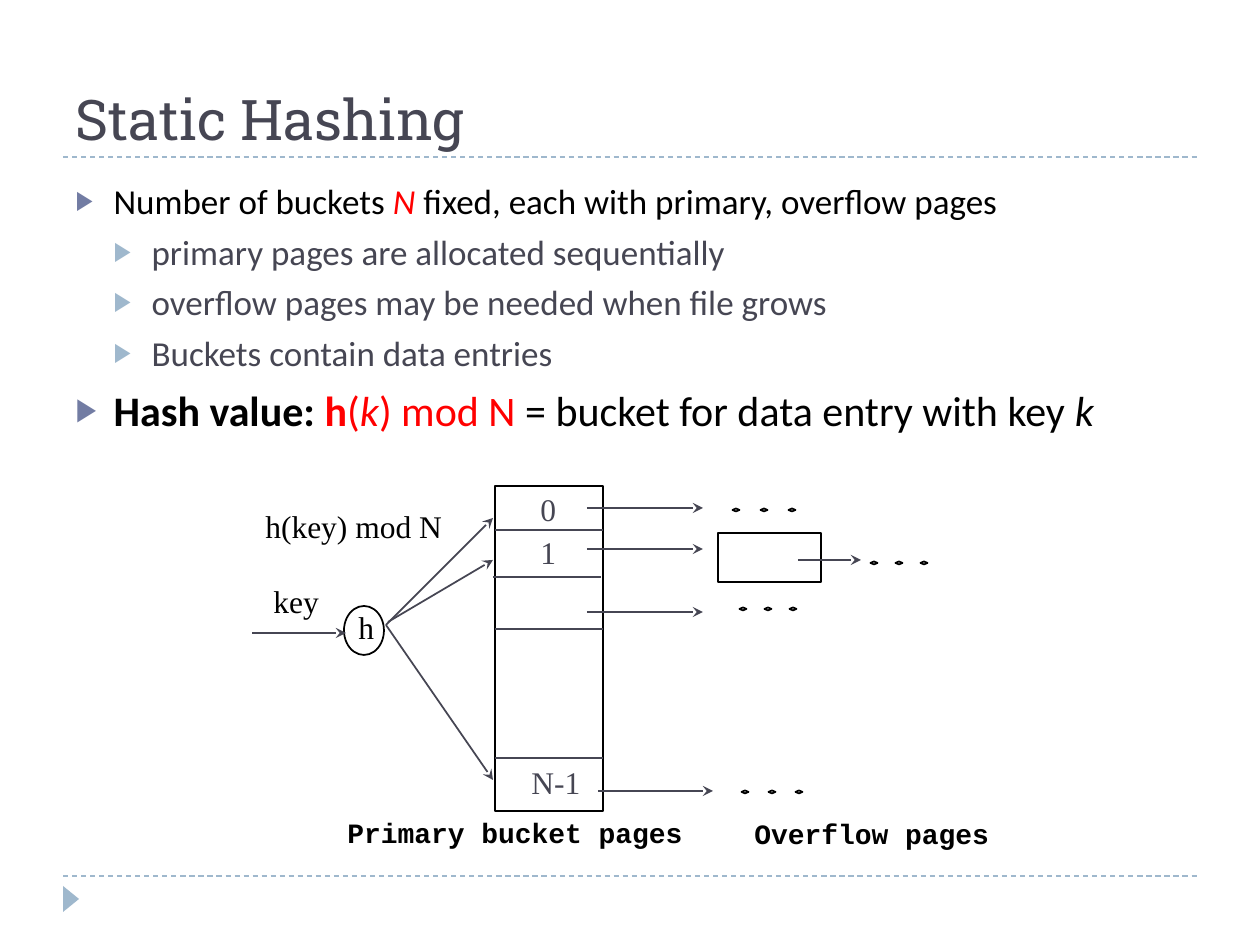
from lxml import etree
from pptx import Presentation
from pptx.dml.color import RGBColor
from pptx.enum.dml import MSO_LINE
from pptx.enum.shapes import MSO_CONNECTOR, MSO_SHAPE
from pptx.enum.text import MSO_ANCHOR, MSO_AUTO_SIZE, PP_ALIGN
from pptx.oxml.ns import qn
from pptx.util import Emu, Pt

SCALE = 914400 / 126  # EMU per px
DASH, STRAIGHT = MSO_LINE.DASH, MSO_CONNECTOR.STRAIGHT
RECTANGLE, OVAL = MSO_SHAPE.RECTANGLE, MSO_SHAPE.OVAL
DIAMOND, TRIANGLE = MSO_SHAPE.DIAMOND, MSO_SHAPE.ISOSCELES_TRIANGLE
LEFT, TOP, BOTTOM = PP_ALIGN.LEFT, MSO_ANCHOR.TOP, MSO_ANCHOR.BOTTOM
NO_AUTOFIT, GROW = MSO_AUTO_SIZE.NONE, MSO_AUTO_SIZE.SHAPE_TO_FIT_TEXT

BLACK = RGBColor(0x00, 0x00, 0x00)
RED = RGBColor(0xFF, 0x00, 0x00)
SLATE = RGBColor(0x46, 0x46, 0x53)
INDIGO = RGBColor(0x72, 0x7C, 0xA3)
SKY = RGBColor(0x9F, 0xB8, 0xCD)

# Content: level, then (text, format) spans
TITLE_FORMAT = {"name": "Roboto Slab", "size": Pt(32), "color": SLATE}
PLAIN = {"name": "Calibri", "size": Pt(20), "color": BLACK}
SUB = PLAIN | {"color": SLATE}
LARGE = PLAIN | {"size": Pt(24)}
LARGE_RED = LARGE | {"color": RED}
BULLETS = [
    (0, [("Number of buckets ", PLAIN),
         ("N", PLAIN | {"color": RED, "italic": True}),
         (" fixed, each with primary, overflow pages", PLAIN)]),
    (1, [("primary pages are allocated sequentially", SUB)]),
    (1, [("overflow pages may be needed when file grows", SUB)]),
    (1, [("Buckets contain data entries", SUB)]),
    (0, [("Hash value: ", LARGE | {"bold": True}),
         ("h", LARGE_RED | {"bold": True}),
         ("(", LARGE_RED),
         ("k", LARGE_RED | {"italic": True}),
         (") mod N ", LARGE_RED),
         ("= bucket for data entry with key ", LARGE),
         ("k", LARGE | {"italic": True})]),
]
LEVELS = [  # indent px, space before, bullet colour
    (38, Pt(6), INDIGO),
    (76, Pt(5), SKY),
]

SERIF = {"name": "Times New Roman", "size": Pt(18), "color": BLACK}
SERIF_SLATE = SERIF | {"color": SLATE}
CAPTION = {"name": "Courier New", "size": Pt(16), "color": BLACK, "bold": True}
LABELS = [  # text, left, top, width, height, format
    ("h(key) mod N", 253, 501, 202, 50, SERIF),
    ("h", 346, 602, 41, 50, SERIF),
    ("key", 261, 576, 72, 50, SERIF),
    ("Primary bucket pages", 335, 809, 360, 46, CAPTION),
    ("Overflow pages", 742, 810, 260, 46, CAPTION),
    ("0", 528, 484, 41, 50, SERIF_SLATE),
    ("1", 528, 527, 41, 50, SERIF_SLATE),
    ("N-1", 519, 757, 74, 50, SERIF_SLATE),
]
OUTLINES = [  # shape, left, top, width, height
    (RECTANGLE, 718, 533, 103, 49),  # overflow page
    (OVAL, 344, 606, 40, 49),        # hash function
    (RECTANGLE, 495, 486, 108, 325),  # primary buckets
]
DOT_WIDTH, DOT_HEIGHT = 7, 3
DOT_ROWS = [  # first centre x, gap, centre y
    (736, 28, 510), (743, 25, 609), (874, 25, 563), (745, 27, 792),
]
ARROWS = [  # from x, y, to x, y
    (388, 622, 493, 560), (386, 625, 493, 518), (386, 625, 493, 780),
    (252, 633, 346, 633),
    (587, 508, 703, 508), (587, 549, 703, 549), (587, 612, 703, 612),
    (598, 791, 713, 791), (798, 560, 861, 560),
]
DIVIDERS = [(495, 530), (493, 577), (495, 629), (495, 758)]  # left, y
DIVIDER_LENGTH = 108
RULES = [157, 876]  # y of the dashed page rules


def px(value):
    return Emu(round(value * SCALE))


def place(shape, left, top, width, height):
    shape.left, shape.top = px(left), px(top)
    shape.width, shape.height = px(width), px(height)


def add_span(para, text, style):
    span = para.add_run()
    span.text = text
    for key, value in style.items():
        if key == "color":
            span.font.color.rgb = value
        else:
            setattr(span.font, key, value)


def add_bullet(para, indent, color):
    properties = para._p.get_or_add_pPr()
    properties.set("marL", str(px(indent)))
    properties.set("indent", str(-px(38)))
    bullet_color = etree.SubElement(properties, qn("a:buClr"))
    etree.SubElement(bullet_color, qn("a:srgbClr"), val=str(color))
    etree.SubElement(properties, qn("a:buSzPct"), val="76000")
    etree.SubElement(properties, qn("a:buFont"), typeface="Arial")
    etree.SubElement(properties, qn("a:buChar"), char="▶")


def add_line(x1, y1, x2, y2, color=SLATE, width=1, dash=None, arrow=False):
    line = shapes.add_connector(STRAIGHT, px(x1), px(y1), px(x2), px(y2))
    line.line.color.rgb = color
    line.line.width = Pt(width)
    if dash:
        line.line.dash_style = dash
    if arrow:
        etree.SubElement(line.line._get_or_add_ln(), qn("a:tailEnd"), type="stealth")
    etree.SubElement(line._element.spPr, qn("a:effectLst"))


def add_outline(kind, left, top, width, height):
    shape = shapes.add_shape(kind, px(left), px(top), px(width), px(height))
    shape.shadow.inherit = False
    shape.fill.background()
    shape.line.color.rgb = BLACK
    shape.line.width = Pt(1)
    return shape


deck = Presentation()
deck.slide_width, deck.slide_height = px(1260), px(945)
page = deck.slides.add_slide(deck.slide_layouts[1])
shapes = page.shapes

# Page rules and corner marker
for y in RULES:
    add_line(63, y, 1197, y, SKY, 0.75, DASH)
marker = add_outline(TRIANGLE, 58, 891, 26, 16)
marker.rotation = 90
marker.fill.solid()
marker.fill.fore_color.rgb = SKY
marker.line.fill.background()

# Title and bullet list
title, body = shapes.title, page.placeholders[1]
place(title, 63, 22, 1134, 136)
place(body, 63, 173, 1113, 661)
for holder, anchor in ((title, BOTTOM), (body, TOP)):
    holder.text_frame.auto_size = NO_AUTOFIT
    holder.text_frame.vertical_anchor = anchor
title_para = title.text_frame.paragraphs[0]
title_para.alignment = LEFT
add_span(title_para, "Static Hashing", TITLE_FORMAT)

for index, (level, spans) in enumerate(BULLETS):
    frame = body.text_frame
    para = frame.add_paragraph() if index else frame.paragraphs[0]
    indent, space, color = LEVELS[level]
    para.level = level
    para.space_before = space
    add_bullet(para, indent, color)
    for text, style in spans:
        add_span(para, text, style)

# Diagram outlines and ellipsis dots
for outline in OUTLINES:
    add_outline(*outline)
for first, gap, y in DOT_ROWS:
    for step in range(3):
        add_outline(DIAMOND, first + step * gap - DOT_WIDTH / 2,
                    y - DOT_HEIGHT / 2, DOT_WIDTH, DOT_HEIGHT)

# Diagram labels, each on one line in a box that grows with its text
for text, left, top, width, height, style in LABELS:
    box = shapes.add_textbox(px(left), px(top), px(width), px(height))
    box.text_frame.word_wrap = False
    box.text_frame.auto_size = GROW
    add_span(box.text_frame.paragraphs[0], text, style)

# Arrows and bucket dividers
for arrow in ARROWS:
    add_line(*arrow, arrow=True)
for left, y in DIVIDERS:
    add_line(left, y, left + DIVIDER_LENGTH, y)

deck.save("out.pptx")
